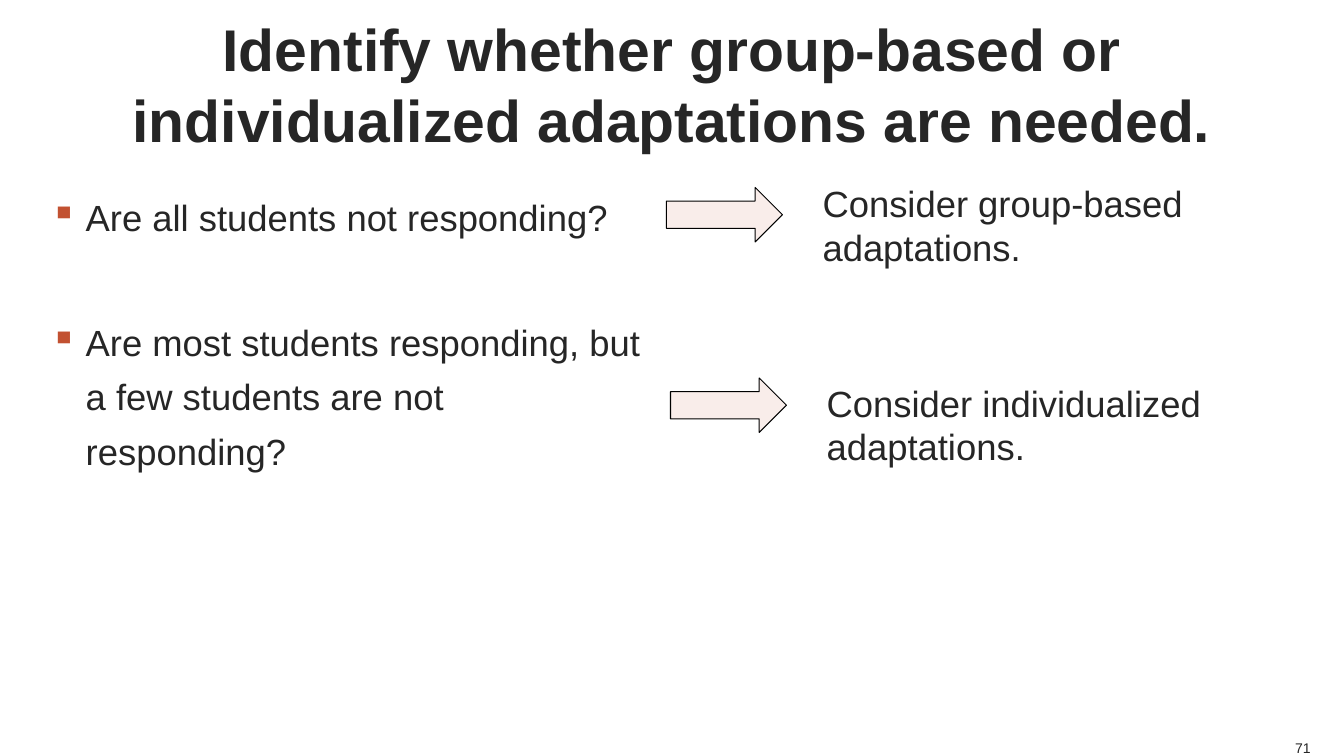
from pptx import Presentation
from pptx.dml.color import RGBColor
from pptx.enum.shapes import MSO_SHAPE
from pptx.enum.text import MSO_ANCHOR, PP_ALIGN
from pptx.oxml.ns import qn
from pptx.util import Inches, Pt
from lxml import etree

ARROW = MSO_SHAPE.RIGHT_ARROW
TOP, MIDDLE, BOTTOM = MSO_ANCHOR.TOP, MSO_ANCHOR.MIDDLE, MSO_ANCHOR.BOTTOM
LEFT, CENTER, RIGHT = PP_ALIGN.LEFT, PP_ALIGN.CENTER, PP_ALIGN.RIGHT
INK, RUST, BLUSH, BLACK = "262626", "C25131", "F9EDEA", "000000"


def color(code):
    """Turn a hex string into a colour."""
    return RGBColor.from_string(code)


def add_bullet(para):
    """Give a paragraph a hanging square bullet."""
    props = para._p.get_or_add_pPr()
    props.set("marL", str(Inches(0.35)))
    props.set("indent", str(-Inches(0.35)))
    tint = etree.SubElement(props, qn("a:buClr"))
    etree.SubElement(tint, qn("a:srgbClr"), val=RUST)
    etree.SubElement(props, qn("a:buChar"), char="▪")


def add_text(slide, text, left, top, width, height, size=26, bold=False, align=LEFT,
             anchor=TOP, inset=(0, 0), wrap=True, bullet=False, line=None, gap=0):
    """Add a text box with one paragraph per line of text."""
    box = slide.shapes.add_textbox(Inches(left), Inches(top), Inches(width), Inches(height))
    frame = box.text_frame
    frame.word_wrap = wrap
    frame.vertical_anchor = anchor
    frame.margin_left = frame.margin_right = Inches(inset[0])
    frame.margin_top = frame.margin_bottom = Inches(inset[1])
    frame.text = text
    for order, para in enumerate(frame.paragraphs):
        para.alignment = align
        if line:
            para.line_spacing = line
        if order:
            para.space_before = Pt(gap)
        if bullet:
            add_bullet(para)
        for run in para.runs:
            font = run.font
            font.name, font.size, font.bold = "Arial", Pt(size), bold
            font.color.rgb = color(INK)


def add_arrow(slide, left, top):
    """Add a pale arrow that points right."""
    arrow = slide.shapes.add_shape(ARROW, Inches(left), Inches(top), Inches(1.15), Inches(0.54))
    arrow.shadow.inherit = False
    arrow.fill.solid()
    arrow.fill.fore_color.rgb = color(BLUSH)
    arrow.line.color.rgb = color(BLACK)
    arrow.line.width = Pt(0.75)


def main():
    """Build the slide and save it."""
    deck = Presentation()
    deck.slide_width, deck.slide_height = Inches(13.33), Inches(7.5)
    slide = deck.slides.add_slide(deck.slide_layouts[6])
    add_text(slide, "Identify whether group-based or individualized adaptations are needed.",
             0.5, 0.13, 12.33, 1.4, size=42, bold=True, align=CENTER, anchor=MIDDLE)
    asks = ("Are all students not responding?",
            "Are most students responding, but a few students are not responding?")
    add_text(slide, "\n".join(asks), 0.5, 1.83, 5.88, 4.42, bullet=True, line=1.25, gap=50)
    advice = (("group-based", 6.61, 1.86, 1.75, 0.98),
              ("individualized", 6.65, 3.75, 3.73, 1.28))
    for kind, left, high, top, height in advice:
        add_arrow(slide, left, high)
        add_text(slide, f"Consider {kind} adaptations.", left + 1.45, top, 4.06, height,
                 inset=(0.1, 0.05))
    add_text(slide, "71", 12.83, 7.33, 0.17, 0.17, size=10, align=RIGHT, anchor=BOTTOM, wrap=False)
    deck.save("out.pptx")


if __name__ == "__main__":
    main()
